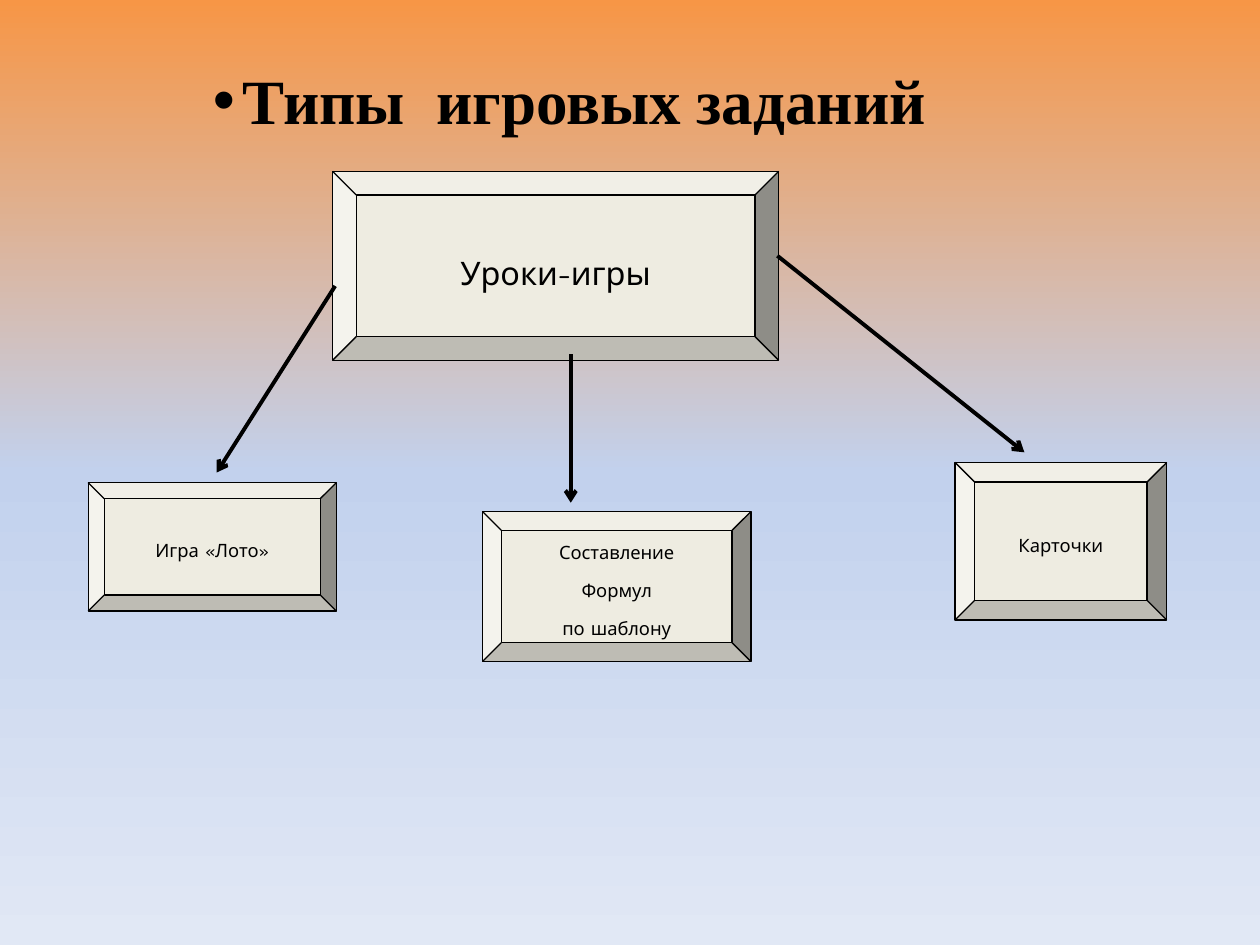
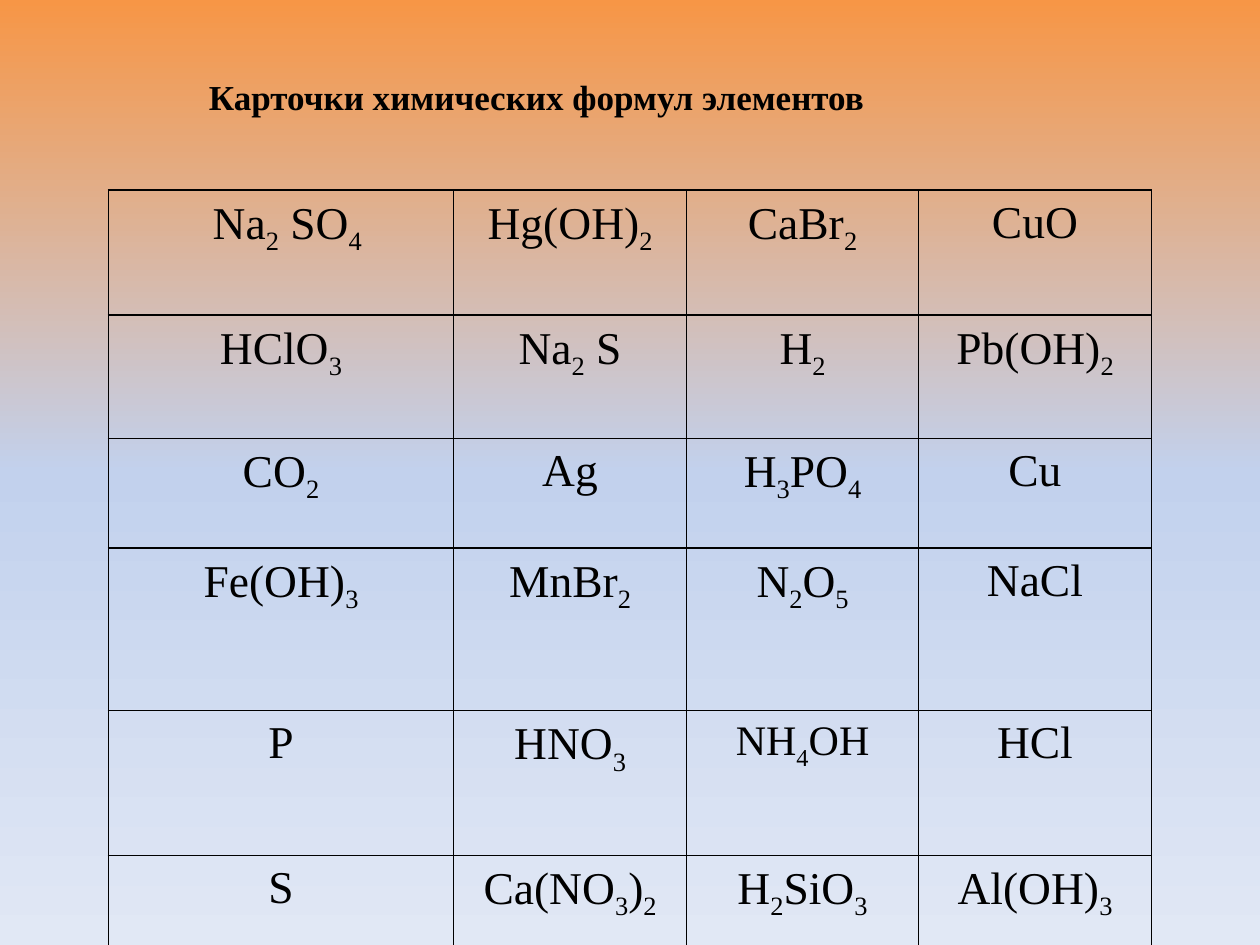
from dataclasses import dataclass
from itertools import groupby

from lxml import etree
from pptx import Presentation
from pptx import util as u
from pptx.dml.color import RGBColor
from pptx.enum import shapes, text
from pptx.oxml import parse_xml
from pptx.oxml.ns import nsdecls, qn

SERIF = "Times New Roman"
CARD_FONT = "Comic Neue"
BLACK = "000000"
CARD_FILL = "EEECE1"
GRADIENT = ((0, "F79646"), (50, "C2D1ED"), (100, "E1E8F5"))


@dataclass
class Card:
    x: float
    y: float
    w: float
    h: float
    lines: tuple[str, ...]
    size: float = 10.5


@dataclass
class Arrow:
    x1: float
    y1: float
    x2: float
    y2: float


CARDS = (
    Card(2.64, 1.36, 3.54, 1.5, ("Уроки-игры",), 18.5),
    Card(0.7, 3.83, 1.97, 1.02, ("Игра «Лото»",)),
    Card(7.58, 3.67, 1.68, 1.25, ("Карточки",)),
    Card(3.83, 4.06, 2.13, 1.19, ("Составление", "Формул", "по шаблону")),
)
ARROWS = (
    Arrow(2.66, 2.27, 1.72, 3.75),
    Arrow(4.53, 2.81, 4.53, 3.99),
    Arrow(6.17, 2.03, 8.13, 3.59),
)
FORMULAS = (
    ("Na2 SO4", "Hg(OH)2", "CaBr2", "CuO"),
    ("HClO3", "Na2 S", "H2", "Pb(OH)2"),
    ("CO2", "Ag", "H3PO4", "Cu"),
    ("Fe(OH)3", "MnBr2", "N2O5", "NaCl"),
    ("P", "HNO3", "NH4OH", "HCl"),
    ("S", "Ca(NO3)2", "H2SiO3", "Al(OH)3"),
)
COL_WIDTHS = (2.74, 1.85, 1.84, 1.85)
ROW_HEIGHTS = (0.99, 0.98, 0.87, 1.29, 1.15, 0.99)
FORMULA_SIZE = 26
SMALLER_SIZES = {"NH4OH": 24}


def rgb(color: str) -> RGBColor:
    return RGBColor.from_string(color)


def add_run(p, content: str, *, size: float, font: str = SERIF,
            bold: bool = False, subscript: bool = False) -> None:
    r = p.add_run()
    r.text = content
    r.font.size = u.Pt(size)
    r.font.name = font
    r.font.bold = bold
    r.font.color.rgb = rgb(BLACK)
    if subscript:
        r.font._element.set("baseline", "-25000")


def add_slide(prs):
    s = prs.slides.add_slide(prs.slide_layouts[6])
    stops = "".join(
        f'<a:gs pos="{pos * 1000}"><a:srgbClr val="{color}"/></a:gs>'
        for pos, color in GRADIENT
    )
    s.element.cSld.insert(0, parse_xml(
        f'<p:bg {nsdecls("p", "a")}><p:bgPr><a:gradFill rotWithShape="1">'
        f'<a:gsLst>{stops}</a:gsLst><a:lin ang="5400000" scaled="0"/>'
        '</a:gradFill><a:effectLst/></p:bgPr></p:bg>'
    ))
    return s


def add_title(s, content: str, x: float, y: float, w: float, h: float,
              *, size: float, bullet: bool = False) -> None:
    tf = s.shapes.add_textbox(*map(u.Inches, (x, y, w, h))).text_frame
    tf.word_wrap = True
    p = tf.paragraphs[0]
    if bullet:
        p.alignment = text.PP_ALIGN.CENTER
        p_pr = p._p.get_or_add_pPr()
        etree.SubElement(p_pr, qn("a:buFont")).set("typeface", "Arial")
        etree.SubElement(p_pr, qn("a:buChar")).set("char", "•")
    add_run(p, content, size=size, bold=True)


def add_card(s, card: Card) -> None:
    sp = s.shapes.add_shape(shapes.MSO_SHAPE.BEVEL,
                            *map(u.Inches, (card.x, card.y, card.w, card.h)))
    sp.shadow.inherit = False
    sp.fill.solid()
    sp.fill.fore_color.rgb = rgb(CARD_FILL)
    sp.line.color.rgb = rgb(BLACK)
    sp.line.width = u.Pt(0.75)
    tf = sp.text_frame
    tf.word_wrap = False
    tf.vertical_anchor = text.MSO_ANCHOR.MIDDLE
    tf.margin_top = u.Inches(0.05) + u.Pt(card.size * 0.4)
    for i, line in enumerate(card.lines):
        p = tf.add_paragraph() if i else tf.paragraphs[0]
        p.alignment = text.PP_ALIGN.CENTER
        if i:
            p.space_before = u.Pt(9)
        add_run(p, line, size=card.size, font=CARD_FONT)


def add_arrow(s, arrow: Arrow) -> None:
    ends = map(u.Inches, (arrow.x1, arrow.y1, arrow.x2, arrow.y2))
    cn = s.shapes.add_connector(shapes.MSO_CONNECTOR.STRAIGHT, *ends)
    cn.line.color.rgb = rgb(BLACK)
    cn.line.width = u.Pt(2.25)
    etree.SubElement(cn.line._get_or_add_ln(), qn("a:tailEnd")).set("type", "arrow")
    etree.SubElement(cn._element.spPr, qn("a:effectLst"))


def fill_cell(cell, formula: str) -> None:
    cell.margin_left = cell.margin_right = u.Inches(0.06)
    cell.margin_top = cell.margin_bottom = 0
    tc_pr = cell._tc.get_or_add_tcPr()
    for side in ("lnL", "lnR", "lnT", "lnB"):
        tc_pr.append(parse_xml(
            f'<a:{side} {nsdecls("a")} w="{u.Pt(1)}"><a:solidFill>'
            f'<a:srgbClr val="{BLACK}"/></a:solidFill></a:{side}>'
        ))
    cell.fill.background()
    p = cell.text_frame.paragraphs[0]
    p.alignment = text.PP_ALIGN.CENTER
    p.line_spacing = 1.15
    size = SMALLER_SIZES.get(formula, FORMULA_SIZE)
    for is_index, chars in groupby(formula, str.isdigit):
        add_run(p, "".join(chars), size=size, subscript=is_index)


def add_formula_table(s, x: float, y: float) -> None:
    w, h = sum(COL_WIDTHS), sum(ROW_HEIGHTS)
    table = s.shapes.add_table(len(ROW_HEIGHTS), len(COL_WIDTHS),
                               *map(u.Inches, (x, y, w, h))).table
    table.first_row = table.horz_banding = False
    for column, width in zip(table.columns, COL_WIDTHS):
        column.width = u.Inches(width)
    for row, height, formulas in zip(table.rows, ROW_HEIGHTS, FORMULAS):
        row.height = u.Inches(height)
        for cell, formula in zip(row.cells, formulas):
            fill_cell(cell, formula)
    first = table.cell(0, 0).text_frame.paragraphs[0]
    first._p.get_or_add_pPr().set("indent", str(u.Inches(0.1)))


def main() -> None:
    prs = Presentation()
    prs.slide_width, prs.slide_height = u.Inches(10), u.Inches(7.5)

    s = add_slide(prs)
    add_title(s, "Типы  игровых заданий", 0.91, 0.44, 7.28, 1.67,
              size=36, bullet=True)
    for card in CARDS:
        add_card(s, card)
    for arrow in ARROWS:
        add_arrow(s, arrow)

    s = add_slide(prs)
    add_title(s, "Карточки химических формул элементов", 1.56, 0.55, 5.94, 0.44,
              size=20)
    add_formula_table(s, 0.86, 1.51)

    prs.save("out.pptx")


if __name__ == "__main__":
    main()
